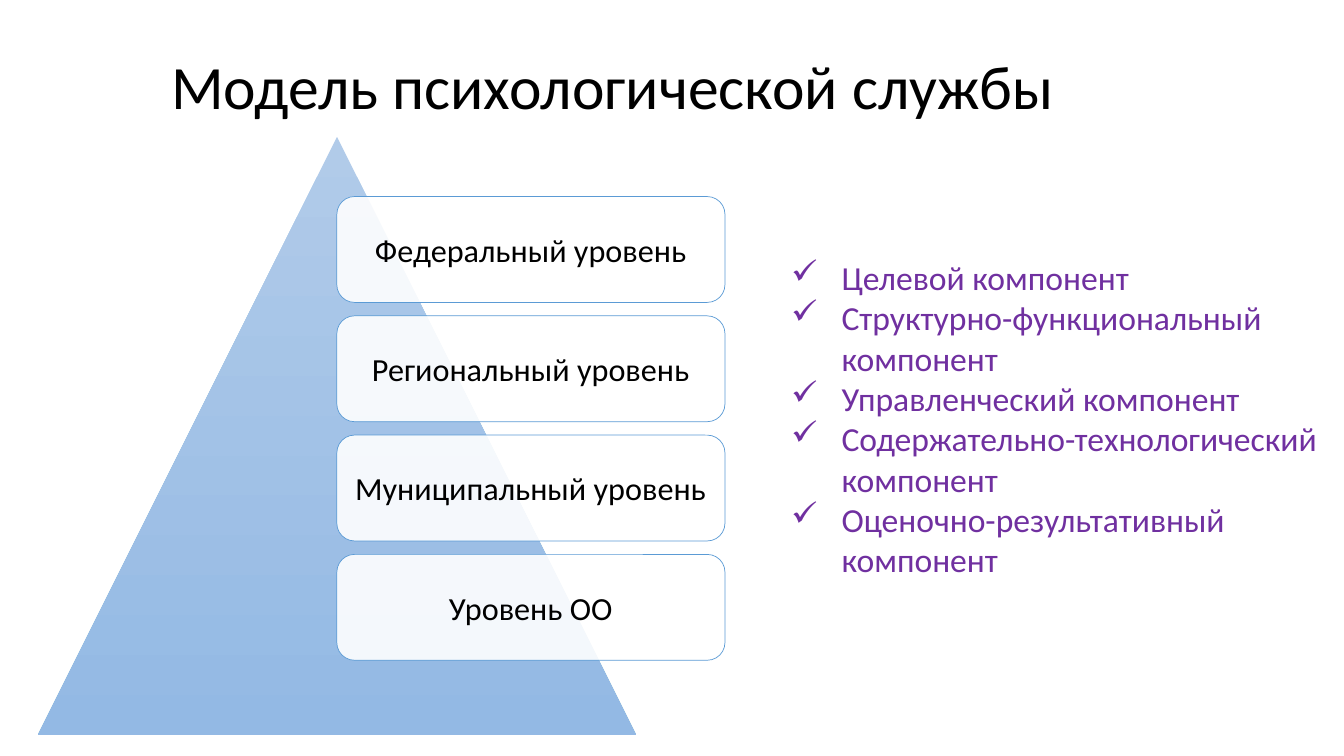
from dataclasses import dataclass

from lxml.etree import SubElement
from pptx import Presentation
from pptx.dml.color import RGBColor
from pptx.enum.shapes import MSO_SHAPE
from pptx.enum.text import MSO_ANCHOR, PP_ALIGN
from pptx.oxml.ns import qn
from pptx.util import Inches, Pt

COLUMNS, ROWS = 32, 18


@dataclass(frozen=True)
class Theme:
    font: str = "Calibri"
    ink: str = "000000"
    accent: str = "7030A0"
    card_fill: str = "FFFFFF"
    card_line: str = "5B9BD5"
    pyramid: tuple = ("B1CBE9", "93B9E4")
    title_size: int = 44
    card_size: int = 23
    list_size: int = 24


def apply(target, values):
    for name, value in values.items():
        setattr(target, name, value)


class SlideBuilder:
    def __init__(self, deck, theme):
        self.theme = theme
        self.column = deck.slide_width / COLUMNS
        self.row = deck.slide_height / ROWS
        self.page = deck.slides.add_slide(deck.slide_layouts[6])

    def place(self, left, top, width, height):
        """Turn grid columns and rows into slide lengths."""
        return (round(left * self.column), round(top * self.row),
                round(width * self.column), round(height * self.row))

    def shape(self, kind, area):
        shape = self.page.shapes.add_shape(kind, *self.place(*area))
        shape.shadow.inherit = False
        return shape

    def fill_text(self, box, lines, size, color, frame=None, para_format=None, bullet=None):
        apply(box.text_frame, {"word_wrap": True, **(frame or {})})
        box.text_frame.text = "\n".join(lines)
        for para in box.text_frame.paragraphs:
            if bullet:
                properties = para._p.get_or_add_pPr()
                properties.set("marL", str(Inches(0.5)))
                properties.set("indent", str(Inches(-0.5)))
                SubElement(properties, qn("a:buChar"), char=bullet)
            apply(para, para_format or {})
            for span in para.runs:
                apply(span.font, {"name": self.theme.font, "size": Pt(size)})
                span.font.color.rgb = RGBColor.from_string(color)

    def text(self, area, lines, size, color, **options):
        box = self.page.shapes.add_textbox(*self.place(*area))
        self.fill_text(box, lines, size, color, **options)

    def pyramid(self, area):
        triangle = self.shape(MSO_SHAPE.ISOSCELES_TRIANGLE, area)
        triangle.line.fill.background()
        triangle.fill.gradient()
        triangle.fill.gradient_angle = 270
        for stop, color in zip(triangle.fill.gradient_stops, self.theme.pyramid):
            stop.color.rgb = RGBColor.from_string(color)

    def card(self, area, label):
        card = self.shape(MSO_SHAPE.ROUNDED_RECTANGLE, area)
        card.fill.solid()
        card.fill.fore_color.rgb = RGBColor.from_string(self.theme.card_fill)
        fill_color = card._element.spPr.find(qn("a:solidFill"))[0]
        SubElement(fill_color, qn("a:alpha"), val="90000")
        card.line.color.rgb = RGBColor.from_string(self.theme.card_line)
        card.line.width = Pt(0.5)
        self.fill_text(card, [label], self.theme.card_size, self.theme.ink,
                       frame={"vertical_anchor": MSO_ANCHOR.MIDDLE,
                              "margin_left": Inches(0.05), "margin_right": Inches(0.05)},
                       para_format={"alignment": PP_ALIGN.CENTER})


def main():
    deck = Presentation()
    apply(deck, {"slide_width": Inches(13.33), "slide_height": Inches(7.5)})
    theme = Theme()
    builder = SlideBuilder(deck, theme)

    builder.text((3.84, 0.38, 25.97, 3.48), ["Модель психологической службы"],
                 theme.title_size, theme.ink,
                 frame={"vertical_anchor": MSO_ANCHOR.MIDDLE},
                 para_format={"line_spacing": 0.9})

    builder.pyramid((0.91, 3.26, 14.23, 14.23))
    levels = ["Федеральный уровень", "Региональный уровень",
              "Муниципальный уровень", "Уровень ОО"]
    for index, level in enumerate(levels):
        builder.card((8.02, 4.68 + index * 2.84, 9.24, 2.52), level)

    components = ["Целевой компонент", "Структурно-функциональный компонент",
                  "Управленческий компонент", "Содержательно-технологический компонент",
                  "Оценочно-результативный компонент"]
    builder.text((18.6, 6, 13.03, 8.21), components,
                 theme.list_size, theme.accent, bullet="✓")
    deck.save("out.pptx")


if __name__ == "__main__":
    main()
